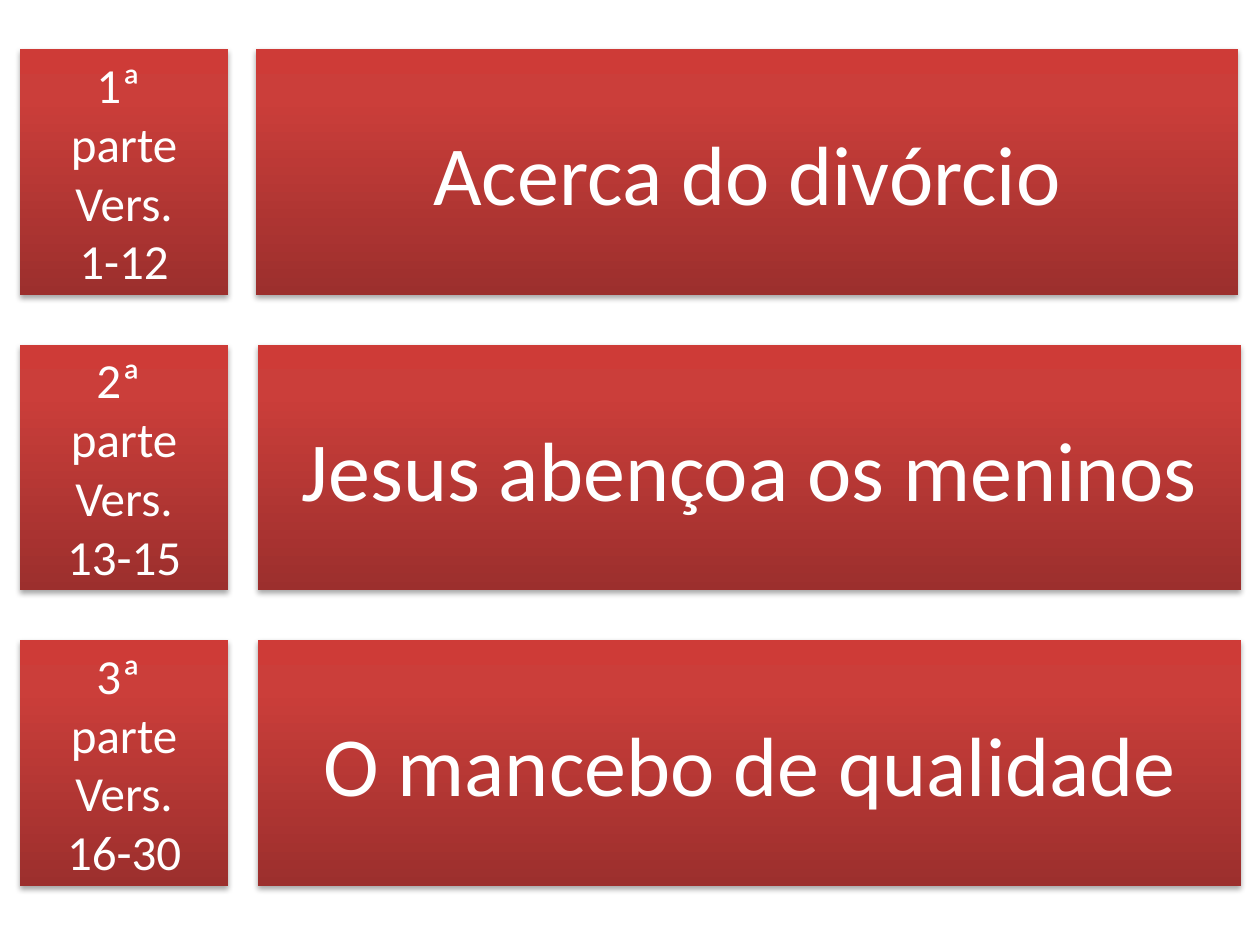
"""Build a slide of three chapter parts, each a verse card beside a title card."""
from pptx import Presentation
from pptx.dml.color import RGBColor
from pptx.enum.shapes import MSO_SHAPE
from pptx.enum.text import MSO_ANCHOR, PP_ALIGN
from pptx.oxml import parse_xml
from pptx.oxml.ns import nsdecls
from pptx.util import Inches, Pt

RECT = MSO_SHAPE.RECTANGLE
MIDDLE = MSO_ANCHOR.MIDDLE
CENTER = PP_ALIGN.CENTER

PARTS = [
    ("1ª ", "1-12", "Acerca do divórcio", 2.03),
    ("2ª ", "13-15", "Jesus abençoa os meninos", 2.05),
    ("3ª ", "16-30", "O mancebo de qualidade", 2.05),
]
THEME = {
    "font": "Calibri",
    "ink": "FFFFFF",
    "verse": 28,
    "title": 48,
    "stops": [(0, "9C2F2D"), (80, "CB3E3A"), (100, "CE3B37")],
    "shade": {"color": "000000", "alpha": 35, "blur": 3.15, "dist": 1.8},
}
LEFT, TOP, STEP, HIGH = 0.16, 0.39, 2.345, 1.95
VERSE_W, TITLE_W = 1.65, 7.8


def paint(card):
    """Give a card its gradient and soft shadow."""
    card.line.fill.background()
    card.shadow.inherit = False
    stops = "".join(
        f'<a:gs pos="{pos * 1000}"><a:srgbClr val="{color}"/></a:gs>'
        for pos, color in THEME["stops"]
    )
    props = card._element.spPr
    props.insert(2, parse_xml(
        f'<a:gradFill {nsdecls("a")} rotWithShape="1"><a:gsLst>{stops}</a:gsLst>'
        '<a:lin ang="16200000" scaled="0"/></a:gradFill>'
    ))
    shade = THEME["shade"]
    props[-1].append(parse_xml(
        f'<a:outerShdw {nsdecls("a")} blurRad="{Pt(shade["blur"])}" '
        f'dist="{Pt(shade["dist"])}" dir="5400000" rotWithShape="0">'
        f'<a:srgbClr val="{shade["color"]}">'
        f'<a:alpha val="{shade["alpha"] * 1000}"/></a:srgbClr></a:outerShdw>'
    ))


def write(frame, lines, size, color=THEME["ink"], font=THEME["font"]):
    """Write centred lines into a text frame."""
    frame.word_wrap = True
    frame.vertical_anchor = MIDDLE
    for row, line in enumerate(lines):
        para = frame.add_paragraph() if row else frame.paragraphs[0]
        para.alignment = CENTER
        run = para.add_run()
        run.text = line
        run.font.size = Pt(size)
        run.font.name = font
        run.font.color.rgb = RGBColor.from_string(color)


def add_card(slide, left, top, width, lines, size):
    """Add one painted card with its text."""
    box = [Inches(n) for n in (left, top, width, HIGH)]
    card = slide.shapes.add_shape(RECT, *box)
    paint(card)
    write(card.text_frame, lines, size=size)


def main():
    """Lay out the rows and save the deck."""
    deck = Presentation()
    deck.slide_width, deck.slide_height = Inches(10), Inches(7.5)
    slide = deck.slides.add_slide(deck.slide_layouts[6])
    for row, (part, verses, title, left) in enumerate(PARTS):
        top = TOP + row * STEP
        label = [part, "parte", "Vers.", verses]
        add_card(slide, LEFT, top, VERSE_W, label, THEME["verse"])
        add_card(slide, left, top, TITLE_W, [title], THEME["title"])
    deck.save("out.pptx")


if __name__ == "__main__":
    main()
